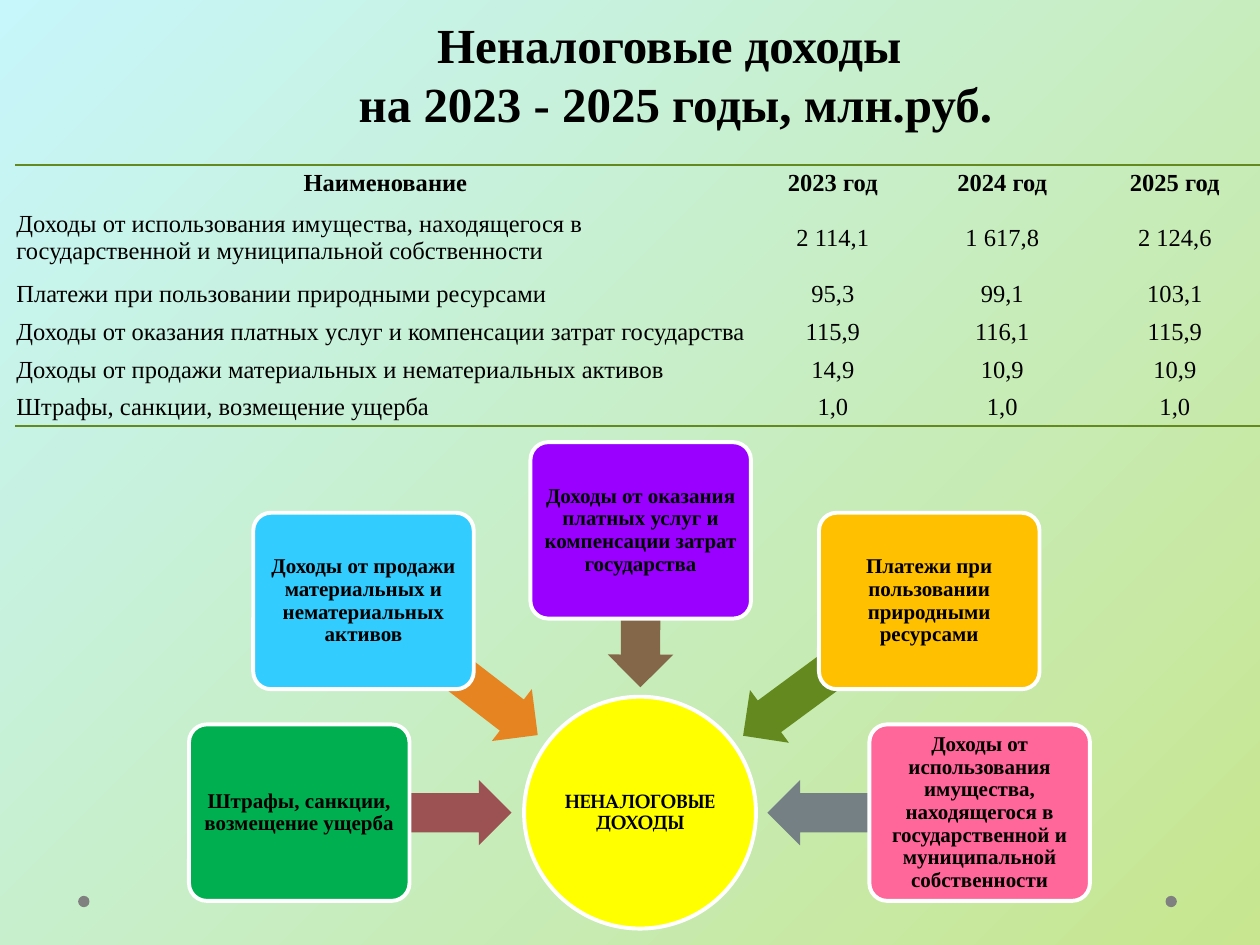
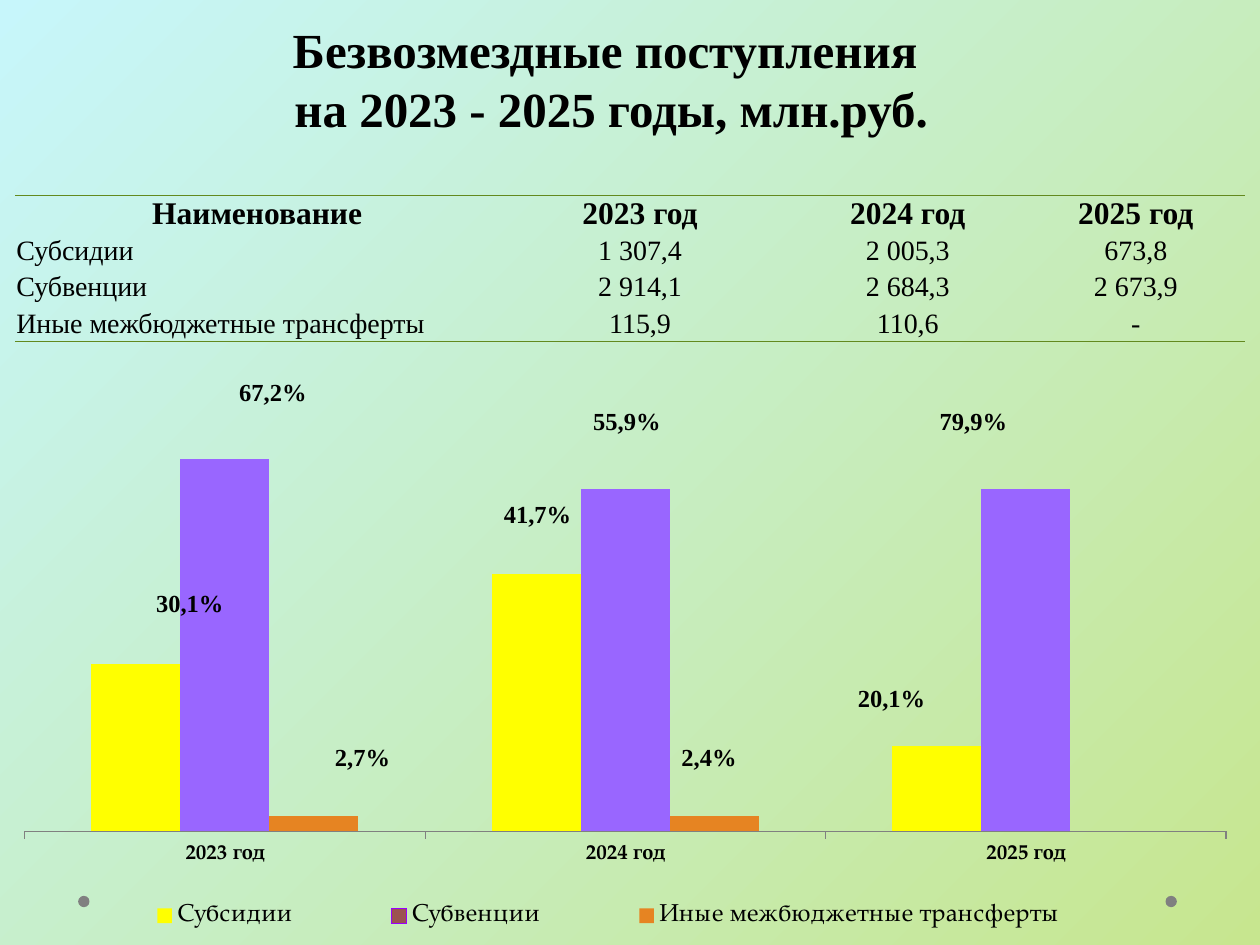
"""Build two slides on non-tax revenue and gratuitous receipts for 2023 - 2025."""
from dataclasses import dataclass

from lxml import etree
from pptx import Presentation
from pptx.chart.data import CategoryChartData
from pptx.dml.color import RGBColor
from pptx.enum.chart import XL_CHART_TYPE, XL_LEGEND_POSITION, XL_TICK_LABEL_POSITION, XL_TICK_MARK
from pptx.enum.shapes import MSO_SHAPE
from pptx.enum.text import MSO_ANCHOR, MSO_AUTO_SIZE, PP_ALIGN
from pptx.oxml import parse_xml
from pptx.oxml.ns import nsdecls, qn
from pptx.util import Inches, Pt

ELLIPSE, CARD, ARROW = MSO_SHAPE.OVAL, MSO_SHAPE.ROUNDED_RECTANGLE, MSO_SHAPE.LEFT_ARROW
LEFT, CENTER = PP_ALIGN.LEFT, PP_ALIGN.CENTER
MIDDLE, BOTTOM = MSO_ANCHOR.MIDDLE, MSO_ANCHOR.BOTTOM
FIXED_SIZE = MSO_AUTO_SIZE.NONE
COLUMNS = XL_CHART_TYPE.COLUMN_CLUSTERED
LEGEND_RIGHT = XL_LEGEND_POSITION.RIGHT
TICK_OUT, TICK_NONE = XL_TICK_MARK.OUTSIDE, XL_TICK_MARK.NONE
LABELS_LOW = XL_TICK_LABEL_POSITION.LOW

SERIF, PAGELLA = "Times New Roman", "TeX Gyre Pagella"
BLACK, WHITE, GREY = "000000", "FFFFFF", "808080"
OLIVE, ORANGE, MAROON, YELLOW = "63891F", "E68422", "9C5252", "FFFF00"
GRADIENT = ("C7F6FB", "C7E68F")
PLAIN_TABLE = "{2D5ABB26-0587-4C30-8999-92F81FD0307C}"
YEARS = ["2023 год", "2024 год", "2025 год"]
HEADER = ["\N{NO-BREAK SPACE}Наименование", *YEARS]
PERIOD = "на 2023 - 2025 годы, млн.руб."


@dataclass
class Box:
    """Place and size in inches."""
    left: float
    top: float
    width: float
    height: float

    def lengths(self) -> tuple:
        """Return the four values as lengths."""
        return tuple(Inches(v) for v in (self.left, self.top, self.width, self.height))


@dataclass
class Source:
    """Revenue card with the arrow that leads from it to the centre."""
    text: str
    left: float
    top: float
    fill: str
    arrow: Box
    angle: float
    arrow_fill: str


@dataclass
class Grid:
    """Table with a header row above its rows of values."""
    box: Box
    widths: list
    heights: list
    rows: list
    header_size: int
    size: int


@dataclass
class Share:
    """Percentage written over a column."""
    text: str
    left: float
    top: float
    width: float


SOURCES = [
    Source("Штрафы, санкции, возмещение ущерба", 1.5, 5.75, "00B050",
           Box(2.38, 6.19, 1.68, 0.52), 180, MAROON),
    Source("Доходы от продажи материальных и нематериальных активов", 2.01, 4.07, "33CCFF",
           Box(2.7, 5.04, 1.75, 0.52), 217.6, ORANGE),
    Source("Доходы от оказания платных услуг и компенсации затрат государства", 4.21, 3.51,
           "9900FF", Box(4.46, 4.57, 1.25, 0.52), 270.2, "846648"),
    Source("Платежи при пользовании природными ресурсами", 6.5, 4.07, "FFC000",
           Box(5.72, 5.04, 1.82, 0.52), 323.6, OLIVE),
    Source("Доходы от использования имущества, находящегося в государственной и "
           "муниципальной собственности", 6.9, 5.75, "FF6699",
           Box(6.09, 6.19, 1.68, 0.52), 0, "758085"),
]
REVENUE = Grid(
    Box(0.12, 1.31, 9.88, 2.08), [5.83, 1.32, 1.37, 1.37], [0.28, 0.59] + [0.3] * 4,
    [
        ["Доходы от использования имущества, находящегося в государственной и "
         "муниципальной собственности", "2 114,1", "1 617,8", "2 124,6"],
        ["Платежи при пользовании природными ресурсами", "95,3", "99,1", "103,1"],
        ["Доходы от оказания платных услуг и компенсации затрат государства",
         "115,9", "116,1", "115,9"],
        ["Доходы от продажи материальных и нематериальных активов", "14,9", "10,9", "10,9"],
        ["Штрафы, санкции, возмещение ущерба", "1,0", "1,0", "1,0"],
    ], 14, 14)
TRANSFERS = Grid(
    Box(0.12, 1.55, 9.76, 1.16), [3.78, 2.36, 1.89, 1.73], [0.29] * 4,
    [
        ["Субсидии", "1 307,4", "2 005,3", "673,8"],
        ["Субвенции", "2 914,1", "2 684,3", "2 673,9"],
        ["Иные межбюджетные трансферты", "115,9", "110,6", "-"],
    ], 18, 16)
SERIES = [
    ("Субсидии", [45, 69, 23], YELLOW),
    ("Субвенции", [100, 92, 92], MAROON),
    ("Иные межбюджетные трансферты", [4, 4, None], ORANGE),
]
SHARES = [
    Share("30,1%", 1.14, 4.62, 0.77), Share("67,2%", 1.8, 2.94, 0.76),
    Share("2,7%", 2.56, 5.84, 0.66), Share("41,7%", 3.9, 3.91, 0.87),
    Share("55,9%", 4.61, 3.17, 0.87), Share("2,4%", 5.31, 5.84, 0.66),
    Share("20,1%", 6.71, 5.37, 0.87), Share("79,9%", 7.36, 3.17, 0.87),
]


def color(code: str) -> RGBColor:
    """Turn a hex string into a colour."""
    return RGBColor.from_string(code)


def set_font(font, size: float, name: str = SERIF, bold: bool = False) -> None:
    """Set a black font."""
    font.size, font.name, font.bold = Pt(size), name, bold
    font.color.rgb = color(BLACK)


def write(frame, text: str, size: float, name: str = SERIF, bold: bool = True,
          align=CENTER, spacing: float = 1.0) -> None:
    """Fill a text frame and format its runs."""
    frame.text = text
    for para in frame.paragraphs:
        para.alignment, para.line_spacing = align, spacing
        for span in para.runs:
            set_font(span.font, size, name, bold)


def set_margins(target, side: float, bottom: float) -> None:
    """Set the inner margins of a cell or text frame."""
    target.margin_left = target.margin_right = target.margin_top = Inches(side)
    target.margin_bottom = Inches(bottom)


def add_figure(page, kind, box: Box, fill: str, outlined: bool = False):
    """Draw a flat preset shape, with a white outline if asked."""
    figure = page.shapes.add_shape(kind, *box.lengths())
    figure.shadow.inherit = False
    figure.fill.solid()
    figure.fill.fore_color.rgb = color(fill)
    if outlined:
        figure.line.color.rgb = color(WHITE)
        figure.line.width = Pt(2.25)
    else:
        figure.line.fill.background()
    return figure


def label_figure(figure, text: str, size: float, name: str, margin: float) -> None:
    """Write a centred bold label inside a shape."""
    frame = figure.text_frame
    frame.word_wrap, frame.vertical_anchor = True, MIDDLE
    set_margins(frame, margin, margin)
    write(frame, text, size, name, spacing=0.9)


def paint_master(master) -> None:
    """Give all slides the diagonal gradient."""
    fill = master.background.fill
    fill.gradient()
    fill.gradient_angle = 315
    for stop, code in zip(fill.gradient_stops, GRADIENT):
        stop.color.rgb = color(code)


def add_page(deck, heading: str, box: Box):
    """Add a slide with its title and two corner dots."""
    page = deck.slides.add_slide(deck.slide_layouts[5])
    title = page.shapes.title
    title.left, title.top, title.width, title.height = box.lengths()
    frame = title.text_frame
    write(frame, f"{heading} \v{PERIOD}", 28)
    frame.word_wrap, frame.vertical_anchor, frame.auto_size = True, BOTTOM, FIXED_SIZE
    for left in (9.25, 0.62):
        add_figure(page, ELLIPSE, Box(left, 7.11, 0.09, 0.09), GREY)
    return page


def add_rule(cell, side: str) -> None:
    """Draw the top (lnT) or bottom (lnB) border of a cell."""
    cell._tc.get_or_add_tcPr().insert(0, parse_xml(
        f'<a:{side} {nsdecls("a")} w="12700"><a:solidFill><a:srgbClr val="{OLIVE}"/>'
        f'</a:solidFill></a:{side}>'))


def add_grid(page, grid: Grid) -> None:
    """Draw a table ruled above its header and below its last row."""
    rows = [HEADER, *grid.rows]
    table = page.shapes.add_table(len(rows), len(HEADER), *grid.box.lengths()).table
    table.first_row = table.horz_banding = False
    table._tbl.tblPr.find(qn("a:tableStyleId")).text = PLAIN_TABLE
    for column, width in zip(table.columns, grid.widths):
        column.width = Inches(width)
    for r, (values, height) in enumerate(zip(rows, grid.heights)):
        table.rows[r].height = Inches(height)
        for c, value in enumerate(values):
            cell = table.cell(r, c)
            cell.fill.background()
            cell.vertical_anchor = MIDDLE
            set_margins(cell, 0.01, 0)
            write(cell.text_frame, value, grid.size if r else grid.header_size,
                  bold=r == 0, align=LEFT if r and c == 0 else CENTER)
            if r == 0:
                add_rule(cell, "lnT")
            elif r == len(rows) - 1:
                add_rule(cell, "lnB")


def make_layout(x: float, y: float, w: float, h: float, inner: bool = False):
    """Make a manual chart layout from fractions of the chart area."""
    layout = etree.Element(qn("c:layout"))
    manual = etree.SubElement(layout, qn("c:manualLayout"))
    settings = {"layoutTarget": "inner"} if inner else {}
    settings |= {"xMode": "edge", "yMode": "edge", "x": x, "y": y, "w": w, "h": h}
    for tag, value in settings.items():
        etree.SubElement(manual, qn(f"c:{tag}")).set("val", str(value))
    return layout


def add_columns(page) -> None:
    """Draw the clustered column chart of transfers."""
    data = CategoryChartData()
    data.categories = YEARS
    for name, values, _ in SERIES:
        data.add_series(name, values)
    box = Box(0.04, 2.88, 9.77, 4.62)
    chart = page.shapes.add_chart(COLUMNS, *box.lengths(), data).chart
    chart.has_title = False
    set_font(chart.font, 10, PAGELLA)
    plot = chart.plots[0]
    plot.gap_width, plot.overlap, plot.vary_by_categories = 150, 0, False
    for series, (_, _, code) in zip(plot.series, SERIES):
        series.format.fill.solid()
        series.format.fill.fore_color.rgb = color(code)
    subventions = plot.series[1]
    subventions.format.line.color.rgb = color("9900FF")
    subventions.format.line.width = Pt(0.75)
    for index in range(len(YEARS)):
        look = subventions.points[index].format
        look.fill.solid()
        look.fill.fore_color.rgb = color("9966FF")
        look.line.fill.background()
    scale, axis = chart.value_axis, chart.category_axis
    scale.minimum_scale, scale.maximum_scale = 0, 120
    scale.has_major_gridlines = scale.visible = False
    axis.major_tick_mark, axis.minor_tick_mark = TICK_OUT, TICK_NONE
    axis.tick_label_position = LABELS_LOW
    axis.format.line.color.rgb = color(GREY)
    set_font(axis.tick_labels.font, 12, PAGELLA, True)
    chart.has_legend = True
    legend = chart.legend
    legend.position, legend.include_in_layout = LEGEND_RIGHT, False
    set_font(legend.font, 14, PAGELLA)
    for old in chart._chartSpace.xpath(".//c:layout"):
        old.getparent().remove(old)
    area = chart._chartSpace.xpath(".//c:plotArea")[0]
    area.insert(0, make_layout(0.016, 0.037, 0.976, 0.768, inner=True))
    legend._element.find(qn("c:legendPos")).addnext(make_layout(0.05, 0.91, 0.88, 0.08))


def build_revenue(deck) -> None:
    """Build the slide on non-tax revenue."""
    page = add_page(deck, "Неналоговые доходы", Box(0.72, 0.46, 9.28, 0.64))
    add_grid(page, REVENUE)
    hub = add_figure(page, ELLIPSE, Box(4.16, 5.53, 1.84, 1.84), YELLOW, True)
    label_figure(hub, "НЕНАЛОГОВЫЕ ДОХОДЫ", 11, PAGELLA, 0.01)
    for source in SOURCES:
        arrow = add_figure(page, ARROW, source.arrow, source.arrow_fill)
        arrow.adjustments[0], arrow.adjustments[1] = 0.6, 0.5
        arrow.rotation = source.angle
        card = add_figure(page, CARD, Box(source.left, source.top, 1.75, 1.4), source.fill, True)
        card.adjustments[0] = 0.1
        label_figure(card, source.text, 12, SERIF, 0.03)


def build_transfers(deck) -> None:
    """Build the slide on gratuitous receipts."""
    page = add_page(deck, "Безвозмездные поступления", Box(0.35, 0.06, 9, 1.08))
    add_columns(page)
    add_grid(page, TRANSFERS)
    for share in SHARES:
        box = Box(share.left, share.top, share.width, 0.34)
        frame = page.shapes.add_textbox(*box.lengths()).text_frame
        frame.word_wrap = True
        write(frame, share.text, 14, align=LEFT)


def main() -> None:
    """Build and save the deck."""
    deck = Presentation()
    deck.slide_width, deck.slide_height = Inches(10), Inches(7.5)
    paint_master(deck.slide_master)
    build_revenue(deck)
    build_transfers(deck)
    deck.save("out.pptx")


if __name__ == "__main__":
    main()
